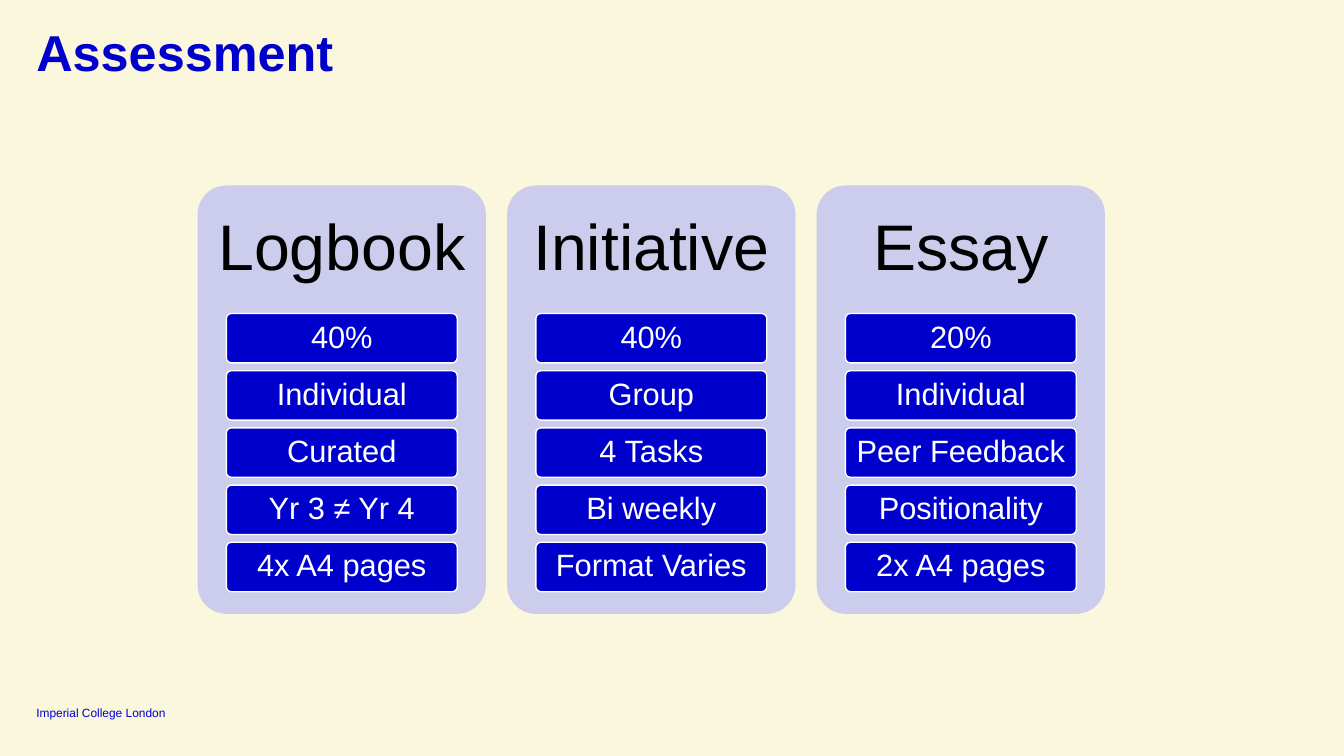
from dataclasses import dataclass

from pptx import Presentation
from pptx.dml.color import RGBColor
from pptx.enum.shapes import MSO_SHAPE
from pptx.enum.text import MSO_ANCHOR, PP_ALIGN
from pptx.shapes.autoshape import Shape
from pptx.slide import Slide
from pptx.util import Inches, Pt

ROUNDED = MSO_SHAPE.ROUNDED_RECTANGLE
TOP, MIDDLE, BOTTOM = MSO_ANCHOR.TOP, MSO_ANCHOR.MIDDLE, MSO_ANCHOR.BOTTOM
LEFT, CENTER = PP_ALIGN.LEFT, PP_ALIGN.CENTER
TITLE_ONLY = 5


@dataclass(frozen=True)
class Theme:
    font: str = "Arial"
    cream: RGBColor = RGBColor(0xFB, 0xF7, 0xDC)
    blue: RGBColor = RGBColor(0x00, 0x00, 0xCD)
    lilac: RGBColor = RGBColor(0xCC, 0xCC, 0xED)
    white: RGBColor = RGBColor(0xFF, 0xFF, 0xFF)
    black: RGBColor = RGBColor(0x00, 0x00, 0x00)
    title_size: float = 36
    heading_size: float = 46
    item_size: float = 22
    footer_size: float = 8.5


@dataclass(frozen=True)
class Frame:
    left: float
    top: float
    width: float
    height: float


@dataclass(frozen=True)
class TextStyle:
    size: float
    color: RGBColor
    align: PP_ALIGN = CENTER
    anchor: MSO_ANCHOR = MIDDLE
    inset_x: float = 0
    inset_y: float = 0
    bold: bool = False
    line_spacing: float = 0.9


@dataclass(frozen=True)
class Assessment:
    heading: str
    items: tuple[str, ...]


THEME = Theme()
TITLE = TextStyle(THEME.title_size, THEME.blue, LEFT, TOP, bold=True)
HEADING = TextStyle(THEME.heading_size, THEME.black, inset_x=0.19, inset_y=0.19)
ITEM = TextStyle(THEME.item_size, THEME.white, inset_x=0.06, inset_y=0.05)
FOOTER = TextStyle(THEME.footer_size, THEME.blue, LEFT, BOTTOM, line_spacing=1.0)

FIRST_PANEL = Frame(1.96, 1.84, 2.86, 4.25)
PANEL_PITCH = 3.07
HEADING_HEIGHT = 1.27
ITEM_WIDTH = 2.29
ITEM_HEIGHT = 0.49
ITEM_PITCH = 0.5675
CORNER = 0.1

ASSESSMENTS = (
    Assessment("Logbook", ("40%", "Individual", "Curated", "Yr 3 ≠ Yr 4", "4x A4 pages")),
    Assessment("Initiative", ("40%", "Group", "4 Tasks", "Bi weekly", "Format Varies")),
    Assessment("Essay", ("20%", "Individual", "Peer Feedback", "Positionality", "2x A4 pages")),
)


def inches(frame: Frame) -> tuple[Inches, Inches, Inches, Inches]:
    return Inches(frame.left), Inches(frame.top), Inches(frame.width), Inches(frame.height)


def write(shape: Shape, text: str, style: TextStyle) -> None:
    body = shape.text_frame
    body.word_wrap = True
    body.vertical_anchor = style.anchor
    body.margin_left = body.margin_right = Inches(style.inset_x)
    body.margin_top = body.margin_bottom = Inches(style.inset_y)
    para = body.paragraphs[0]
    para.alignment = style.align
    para.line_spacing = style.line_spacing
    span = para.add_run()
    span.text = text
    span.font.name = THEME.font
    span.font.size = Pt(style.size)
    span.font.bold = style.bold
    span.font.color.rgb = style.color


def add_text(page: Slide, frame: Frame, text: str, style: TextStyle) -> None:
    write(page.shapes.add_textbox(*inches(frame)), text, style)


def add_rounded(page: Slide, frame: Frame, fill: RGBColor) -> Shape:
    box = page.shapes.add_shape(ROUNDED, *inches(frame))
    box.adjustments[0] = CORNER
    box.shadow.inherit = False
    box.fill.solid()
    box.fill.fore_color.rgb = fill
    box.line.fill.background()
    return box


def add_item(page: Slide, frame: Frame, text: str) -> None:
    box = add_rounded(page, frame, THEME.blue)
    box.line.color.rgb = THEME.white
    box.line.width = Pt(1)
    write(box, text, ITEM)


def add_assessment(page: Slide, panel: Frame, assessment: Assessment) -> None:
    add_rounded(page, panel, THEME.lilac)
    heading = Frame(panel.left, panel.top, panel.width, HEADING_HEIGHT)
    add_text(page, heading, assessment.heading, HEADING)
    left = panel.left + (panel.width - ITEM_WIDTH) / 2
    first_top = panel.top + HEADING_HEIGHT
    for row, text in enumerate(assessment.items):
        frame = Frame(left, first_top + row * ITEM_PITCH, ITEM_WIDTH, ITEM_HEIGHT)
        add_item(page, frame, text)


def add_title(page: Slide, frame: Frame, text: str) -> None:
    title = page.shapes.title
    title.left, title.top, title.width, title.height = inches(frame)
    write(title, text, TITLE)


def main() -> None:
    deck = Presentation()
    deck.slide_width, deck.slide_height = Inches(13.33), Inches(7.5)
    page = deck.slides.add_slide(deck.slide_layouts[TITLE_ONLY])
    page.background.fill.solid()
    page.background.fill.fore_color.rgb = THEME.cream
    add_title(page, Frame(0.36, 0.28, 9.3, 0.58), "Assessment")
    for column, assessment in enumerate(ASSESSMENTS):
        left = FIRST_PANEL.left + column * PANEL_PITCH
        panel = Frame(left, FIRST_PANEL.top, FIRST_PANEL.width, FIRST_PANEL.height)
        add_assessment(page, panel, assessment)
    add_text(page, Frame(0.36, 6.99, 1.55, 0.15), "Imperial College London", FOOTER)
    deck.save("out.pptx")


if __name__ == "__main__":
    main()
